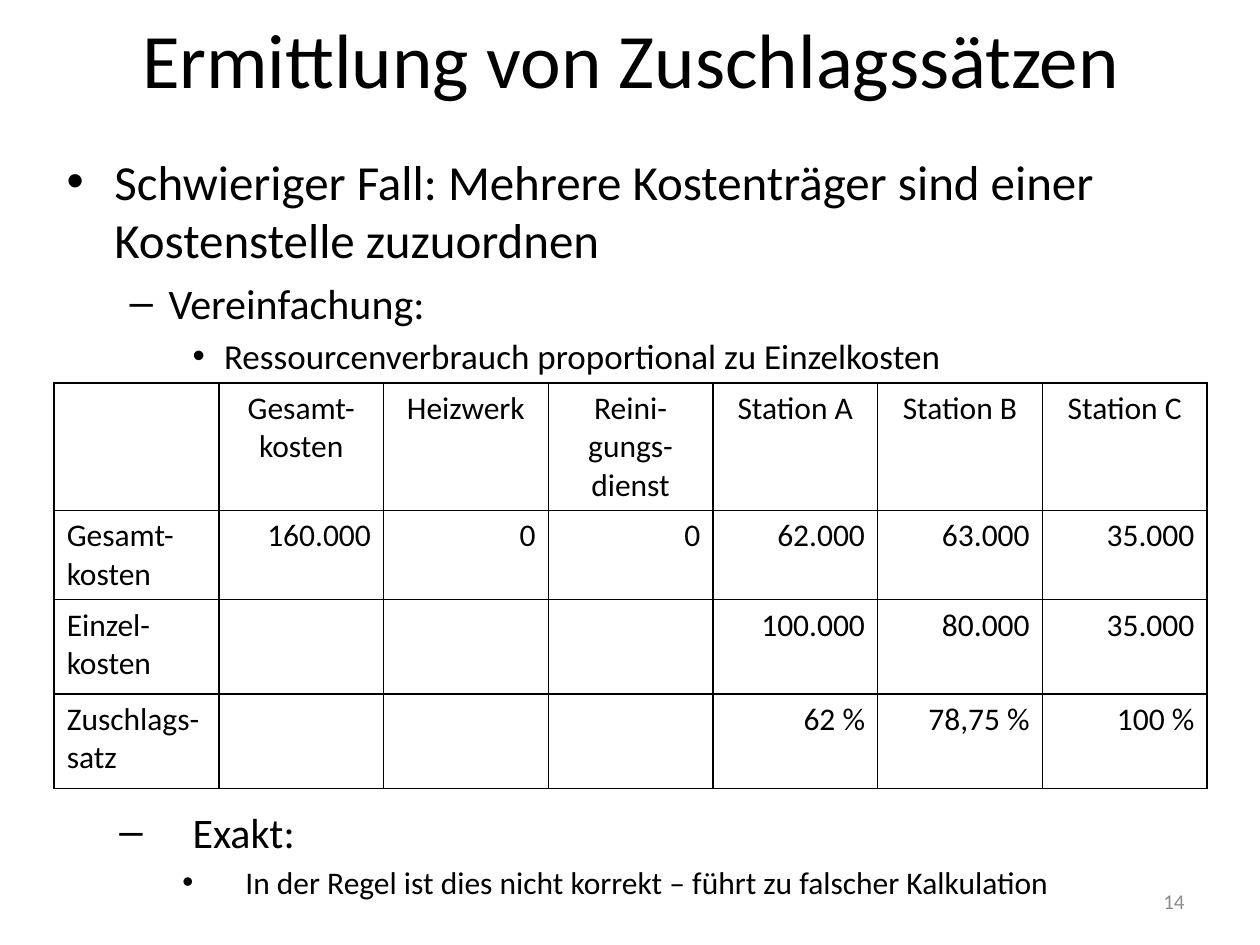
"""Build a slide on overhead rates with bullets and a cost table."""
from lxml.etree import SubElement
from pptx import Presentation
from pptx.dml.color import RGBColor
from pptx.enum.text import MSO_ANCHOR, PP_ALIGN
from pptx.oxml.ns import qn
from pptx.util import Inches, Pt


def add_run(paragraph, text, size, color="000000"):
    run = paragraph.add_run()
    run.text = text
    run.font.name = "Calibri"
    run.font.size = Pt(size)
    run.font.color.rgb = RGBColor.from_string(color)


def add_bullets(slide, left, top, width, height, items):
    frame = slide.shapes.add_textbox(
        Inches(left), Inches(top), Inches(width), Inches(height)).text_frame
    frame.word_wrap = True
    for index, (level, bullet, margin, hanging, size, text) in enumerate(items):
        paragraph = frame.add_paragraph() if index else frame.paragraphs[0]
        paragraph.level = level
        paragraph.space_before = Pt(size * 0.2)
        properties = paragraph._p.get_or_add_pPr()
        properties.set("marL", str(Inches(margin)))
        properties.set("indent", str(-Inches(hanging)))
        SubElement(properties, qn("a:buFont"), typeface="Arial")
        SubElement(properties, qn("a:buChar"), char=bullet)
        add_run(paragraph, text, size)


presentation = Presentation()
presentation.slide_width = Inches(10)
presentation.slide_height = Inches(7.5)
slide = presentation.slides.add_slide(presentation.slide_layouts[5])

title = slide.shapes.title
title.left, title.top = Inches(0.51), Inches(0)
title.width, title.height = Inches(9), Inches(0.91)
title.text_frame.vertical_anchor = MSO_ANCHOR.MIDDLE
title_paragraph = title.text_frame.paragraphs[0]
title_paragraph.alignment = PP_ALIGN.CENTER
add_run(title_paragraph, "Ermittlung von Zuschlagssätzen", 44)

add_bullets(slide, 0.43, 1.15, 9.23, 2.06, [
    (0, "•", 0.38, 0.38, 28,
     "Schwieriger Fall: Mehrere Kostenträger sind einer Kostenstelle zuzuordnen"),
    (1, "–", 0.81, 0.31, 24, "Vereinfachung:"),
    (2, "•", 1.25, 0.25, 20, "Ressourcenverbrauch proportional zu Einzelkosten"),
])

rows = [
    ["", "Gesamt-\nkosten", "Heizwerk", "Reini-\ngungs-\ndienst",
     "Station A", "Station B", "Station C"],
    ["Gesamt-\nkosten", "160.000", "0", "0", "62.000", "63.000", "35.000"],
    ["Einzel-\nkosten", "", "", "", "100.000", "80.000", "35.000"],
    ["Zuschlags-\nsatz", "", "", "", "62 %", "78,75 %", "100 %"],
]
row_heights = [1.01, 0.71, 0.75, 0.75]
table = slide.shapes.add_table(
    len(rows), len(rows[0]), Inches(0.43), Inches(3.04),
    Inches(9.15), Inches(sum(row_heights))).table
table.first_row = False
table.horz_banding = False
for column in table.columns:
    column.width = Inches(9.15 / len(rows[0]))

for row_index, (values, height) in enumerate(zip(rows, row_heights)):
    table.rows[row_index].height = Inches(height)
    for column_index, value in enumerate(values):
        cell = table.cell(row_index, column_index)
        cell_properties = cell._tc.get_or_add_tcPr()
        for side in ("lnL", "lnR", "lnT", "lnB"):
            line = SubElement(cell_properties, qn(f"a:{side}"), w=str(Pt(1)))
            line_fill = SubElement(line, qn("a:solidFill"))
            SubElement(line_fill, qn("a:srgbClr"), val="000000")
        cell.fill.solid()
        cell.fill.fore_color.rgb = RGBColor.from_string("FFFFFF")
        if not value:
            continue
        if row_index == 0:
            alignment = PP_ALIGN.CENTER
        else:
            alignment = PP_ALIGN.RIGHT if column_index else PP_ALIGN.JUSTIFY
        for line_index, text in enumerate(value.split("\n")):
            frame = cell.text_frame
            paragraph = frame.add_paragraph() if line_index else frame.paragraphs[0]
            paragraph.alignment = alignment
            add_run(paragraph, text, 18)

add_bullets(slide, 0.35, 6.35, 9.23, 0.96, [
    (1, "–", 1.08, 0.58, 24, "Exakt:"),
    (2, "•", 1.5, 0.5, 18,
     "In der Regel ist dies nicht korrekt – führt zu falscher Kalkulation"),
])

number_frame = slide.shapes.add_textbox(
    Inches(7.17), Inches(6.95), Inches(2.33), Inches(0.4)).text_frame
number_frame.word_wrap = True
number_frame.vertical_anchor = MSO_ANCHOR.MIDDLE
number_paragraph = number_frame.paragraphs[0]
number_paragraph.alignment = PP_ALIGN.RIGHT
add_run(number_paragraph, "14", 12, "8C8C8C")

presentation.save("out.pptx")
